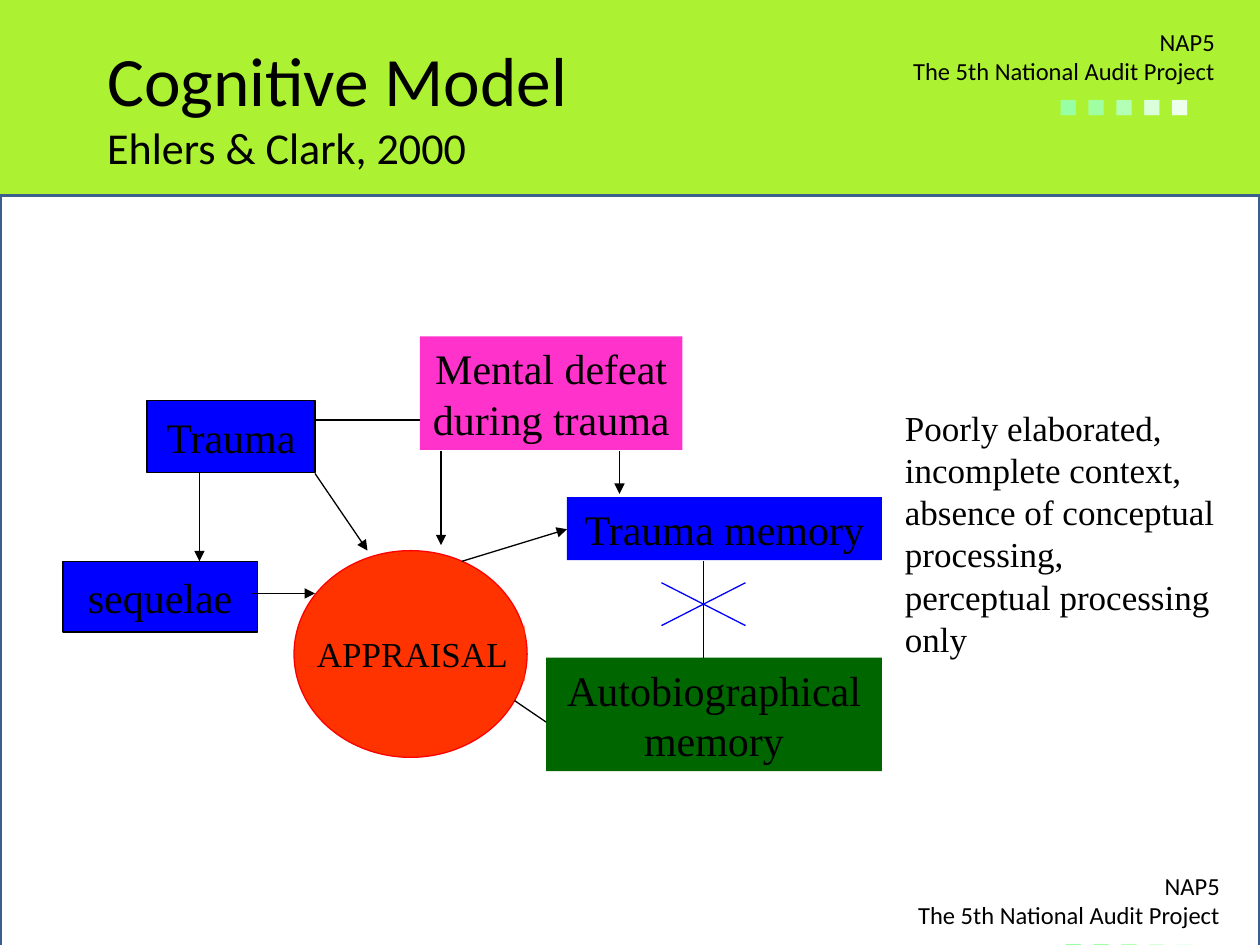
from lxml.etree import SubElement
from pptx import Presentation
from pptx.dml.color import RGBColor
from pptx.enum.shapes import MSO_CONNECTOR, MSO_SHAPE
from pptx.enum.text import MSO_ANCHOR, PP_ALIGN
from pptx.oxml.ns import qn
from pptx.util import Inches, Pt

LIME = RGBColor(0xAD, 0xF2, 0x32)
WHITE = RGBColor(0xFF, 0xFF, 0xFF)
BLACK = RGBColor(0x00, 0x00, 0x00)
NAVY = RGBColor(0x3A, 0x5F, 0x8C)
BLUE = RGBColor(0x00, 0x00, 0xFF)
GREEN = RGBColor(0x00, 0x66, 0x00)
PINK = RGBColor(0xFF, 0x33, 0xCC)
ORANGE = RGBColor(0xFF, 0x33, 0x00)
RED = RGBColor(0xFF, 0x00, 0x00)
SQUARE_TINTS = [RGBColor.from_string(tint) for tint in
                ("99FFA4", "A0FFA3", "B3FFB5", "DAFFDB", "EDFFED")]
SANS, SERIF = "Calibri", "Times New Roman"
COLUMN, ROW = Inches(1) / 12, Inches(0.085)


def add_run(paragraph, text, font, size, color=BLACK):
    """Append one formatted run."""
    run = paragraph.add_run()
    run.text = text
    run.font.name, run.font.size = font, Pt(size)
    run.font.color.rgb = color


def add_box(slide, box, fill=None, line=None, width=0.75, kind=MSO_SHAPE.RECTANGLE):
    """Place a preset shape with the given fill and outline."""
    shape = slide.shapes.add_shape(kind, *(int(length) for length in box))
    shape.shadow.inherit = False
    if fill is None:
        shape.fill.background()
    else:
        shape.fill.solid()
        shape.fill.fore_color.rgb = fill
    if line is None:
        shape.line.fill.background()
    else:
        shape.line.color.rgb, shape.line.width = line, Pt(width)
    return shape


def add_line(slide, ends, color=BLACK, arrow=False):
    """Draw a thin straight line, with an arrowhead at its end on request."""
    line = slide.shapes.add_connector(MSO_CONNECTOR.STRAIGHT, *(int(end) for end in ends))
    line.line.color.rgb, line.line.width = color, Pt(0.75)
    if arrow:
        SubElement(line.line._get_or_add_ln(), qn("a:tailEnd"), type="triangle")
    SubElement(line._element.spPr, qn("a:effectLst"))


def add_banner(slide, box):
    """Write the project name above a row of fading squares."""
    frame = slide.shapes.add_textbox(*box).text_frame
    frame.word_wrap, frame.vertical_anchor = True, MSO_ANCHOR.MIDDLE
    name = frame.paragraphs[0]
    for paragraph, text in ((name, "NAP5"),
                            (frame.add_paragraph(), "The 5th National Audit Project")):
        paragraph.alignment = PP_ALIGN.RIGHT
        add_run(paragraph, text, SANS, 14)
    squares = frame.add_paragraph()
    squares.alignment = PP_ALIGN.LEFT
    squares._p.get_or_add_pPr().set("marL", str(Pt(125)))
    for index, tint in enumerate(SQUARE_TINTS):
        text = "■ " if index < len(SQUARE_TINTS) - 1 else "■"
        add_run(squares, text, "Arial", 18, tint)


def add_title(slide, box):
    """Set the model's name and its source in the title placeholder."""
    title = slide.shapes.title
    title.left, title.top, title.width, title.height = box
    frame = title.text_frame
    frame.word_wrap, frame.vertical_anchor = True, MSO_ANCHOR.MIDDLE
    heading = frame.paragraphs[0]
    heading.alignment = PP_ALIGN.LEFT
    add_run(heading, "Cognitive Model ", SANS, 39.6)
    heading.add_line_break()
    add_run(heading, "Ehlers & Clark, 2000", SANS, 25.2)


def add_diagram(slide, left, top):
    """Lay out the trauma model on a grid starting at the given corner."""
    def place(column, row, columns, rows):
        return left + column * COLUMN, top + row * ROW, columns * COLUMN, rows * ROW

    def add_label(text, cells, fill=None, line=None, size=24, align=PP_ALIGN.CENTER):
        label = add_box(slide, place(*cells), fill, line)
        frame = label.text_frame
        frame.word_wrap, frame.vertical_anchor = True, MSO_ANCHOR.MIDDLE
        frame.paragraphs[0].alignment = align
        add_run(frame.paragraphs[0], text, SERIF, size)
        return label

    add_box(slide, place(22, 20, 22.2, 19.3), ORANGE, RED, kind=MSO_SHAPE.OVAL)
    appraisal = add_label("APPRAISAL", (23, 27, 21, 5.2), ORANGE, size=20,
                          align=PP_ALIGN.LEFT)
    appraisal_color = appraisal._element.spPr.find(qn("a:solidFill"))[0]
    SubElement(appraisal_color, qn("a:alpha"), val="50000")

    add_label("Trauma", (8, 6, 16, 6.7), BLUE, BLACK)
    add_label("sequelae", (0, 21, 18.5, 6.6), BLUE, BLACK)
    add_label("Trauma memory", (48, 15, 30, 5.9), BLUE)
    add_label("Autobiographical memory", (46, 30, 32, 10.6), GREEN)
    add_label("Mental defeat during trauma", (34, 0, 25, 10.6), PINK)
    add_label("Poorly elaborated, incomplete context, absence of conceptual "
              "processing, perceptual processing only", (79, 6, 32, 24.7),
              size=20, align=PP_ALIGN.LEFT)

    arrows = [(24, 12.8, 29, 20), (18, 24, 24, 24), (13, 12.8, 13, 21),
              (38, 21, 48, 18), (53, 10.7, 53, 14.7), (36, 10.7, 36, 19.5)]
    links = [(61, 21, 61, 30), (43, 34, 46, 36), (24, 7.8, 34, 7.8)]
    cross = [(57, 27, 65, 23), (57, 23, 65, 27)]
    for group, color, arrow in ((arrows, BLACK, True), (links, BLACK, False),
                                (cross, BLUE, False)):
        for x1, y1, x2, y2 in group:
            ends = (left + x1 * COLUMN, top + y1 * ROW, left + x2 * COLUMN, top + y2 * ROW)
            add_line(slide, ends, color, arrow)


def main():
    """Build and save the slide."""
    deck = Presentation()
    deck.slide_width, deck.slide_height = Inches(10), Inches(7.5)
    slide = deck.slides.add_slide(deck.slide_layouts[5])
    slide.background.fill.solid()
    slide.background.fill.fore_color.rgb = LIME
    add_box(slide, (0, Inches(1.55), deck.slide_width, Inches(6.38)), WHITE, NAVY, 2)
    for left, top in ((6.57, 0.2), (6.61, 6.9)):
        add_banner(slide, (Inches(left), Inches(top), Inches(3.17), Inches(0.79)))
    add_title(slide, (Inches(0.75), Inches(0.21), Inches(9.05), Inches(1.25)))
    add_diagram(slide, Inches(0.5), Inches(2.67))
    deck.save("out.pptx")


if __name__ == "__main__":
    main()
